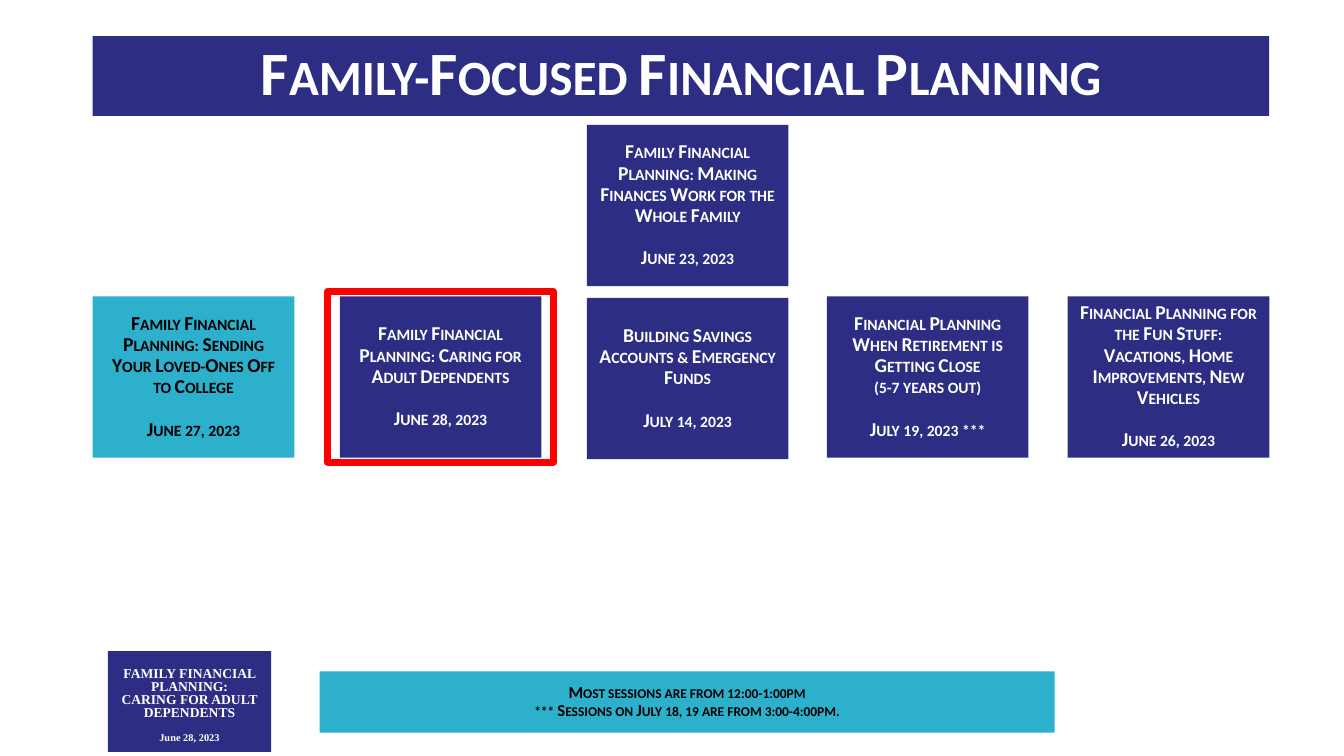
from collections import namedtuple
from pptx import Presentation
from pptx.dml.color import RGBColor
from pptx.enum.shapes import MSO_SHAPE
from pptx.enum.text import MSO_ANCHOR, PP_ALIGN
from pptx.util import Inches, Pt

Box = namedtuple("Box", "x y w h")  # percent of the slide's width and height


class Theme:
    navy = RGBColor(0x2D, 0x2D, 0x83)
    teal = RGBColor(0x2D, 0xB0, 0xCC)
    red = RGBColor(0xFF, 0, 0)
    white = RGBColor(0xFF, 0xFF, 0xFF)
    black = RGBColor(0, 0, 0)
    sans, serif = "Calibri", "Times New Roman"
    title, card, note, label, date = 44, 14, 12, 9.7, 7.4
    frame = 5


WIDE, HIGH = Inches(13.33), Inches(7.5)
COLS = [6.9, 25.28, 43.66, 61.52, 79.44]
CARD_W, CARD_H = 15, 21.33
TOP, ROW = 16.53, 39.2

# Column, top, wording, date
CARDS = [
    (0, ROW, "Family Financial Planning: Sending Your Loved-Ones Off to College",
     "June 27, 2023"),
    (1, ROW, "Family Financial Planning: Caring for Adult Dependents",
     "June 28, 2023"),
    (2, TOP, "Family Financial Planning: Making Finances Work for the Whole Family",
     "June 23, 2023"),
    (2, ROW + 0.2, "Building Savings Accounts & Emergency Funds", "July 14, 2023"),
    (3, ROW, "Financial Planning When Retirement is Getting Close\n(5-7 years out)",
     "July 19, 2023 ***"),
    (4, ROW, "Financial Planning for the Fun Stuff: Vacations, Home Improvements, "
     "New Vehicles", "June 26, 2023"),
]


def block(slide, box, fill=None):
    shape = slide.shapes.add_shape(
        MSO_SHAPE.RECTANGLE, round(WIDE * box.x / 100), round(HIGH * box.y / 100),
        round(WIDE * box.w / 100), round(HIGH * box.h / 100))
    shape.shadow.inherit = False
    shape.line.fill.background()
    if fill is None:
        shape.fill.background()
    else:
        shape.fill.solid()
        shape.fill.fore_color.rgb = fill
    frame = shape.text_frame
    frame.word_wrap = True
    frame.vertical_anchor = MSO_ANCHOR.MIDDLE
    return shape


def write(para, text, size, color, face=Theme.sans, small=True, pitch=0.9, gap=0):
    para.alignment = PP_ALIGN.CENTER
    para.line_spacing = pitch
    if gap:
        para.space_before = Pt(gap)
    for i, line in enumerate(text.split("\n")):
        if i:
            para.add_line_break()
        run = para.add_run()
        run.text = line
        font = run.font
        font.name, font.size, font.bold = face, Pt(size), True
        font.color.rgb = color
        if small:
            run._r.get_or_add_rPr().set("cap", "small")


def banner(slide, box, text, fill, size, color):
    frame = block(slide, box, fill).text_frame
    write(frame.paragraphs[0], text, size, color)


def card(slide, box, text, date, fill, color):
    frame = block(slide, box, fill).text_frame
    write(frame.paragraphs[0], text, Theme.card, color)
    write(frame.add_paragraph(), date, Theme.card, color, gap=15.2)


def label(slide, box, text, date):
    frame = block(slide, box, Theme.navy).text_frame
    frame.margin_top = Inches(0.14)
    style = dict(color=Theme.white, face=Theme.serif, small=False, pitch=0.8)
    write(frame.paragraphs[0], text, Theme.label, **style)
    write(frame.add_paragraph(), date, Theme.date, gap=9.5, **style)


def focus(slide, box, dx=0.9, dy=0.6):
    ring = block(slide, Box(box.x - dx, box.y - dy, box.w + 2 * dx, box.h + 2 * dy))
    ring.line.color.rgb = Theme.red
    ring.line.width = Pt(Theme.frame)


def main():
    deck = Presentation()
    deck.slide_width, deck.slide_height = WIDE, HIGH
    slide = deck.slides.add_slide(deck.slide_layouts[6])

    # Corner label
    label(slide, Box(8.03, 86.13, 12.15, 13.33),
          "FAMILY FINANCIAL PLANNING:\nCARING FOR ADULT DEPENDENTS", "June 28, 2023")

    # Title
    banner(slide, Box(COLS[0], 4.8, COLS[-1] + CARD_W - COLS[0], 10.53),
           "Family-Focused Financial Planning", Theme.navy, Theme.title, Theme.white)

    # Session cards, the first one in teal
    for i, (col, top, text, date) in enumerate(CARDS):
        fill, color = (Theme.navy, Theme.white) if i else (Theme.teal, Theme.black)
        card(slide, Box(COLS[col], top, CARD_W, CARD_H), text, date, fill, color)

    # Session times
    banner(slide, Box(23.78, 88.8, 54.69, 8.13),
           "Most sessions are from 12:00-1:00pm\n"
           "*** Sessions on July 18, 19 are from 3:00-4:00pm.",
           Theme.teal, Theme.note, Theme.black)

    # Ring around the current session
    focus(slide, Box(COLS[1], ROW, CARD_W, CARD_H))
    deck.save("out.pptx")


if __name__ == "__main__":
    main()
